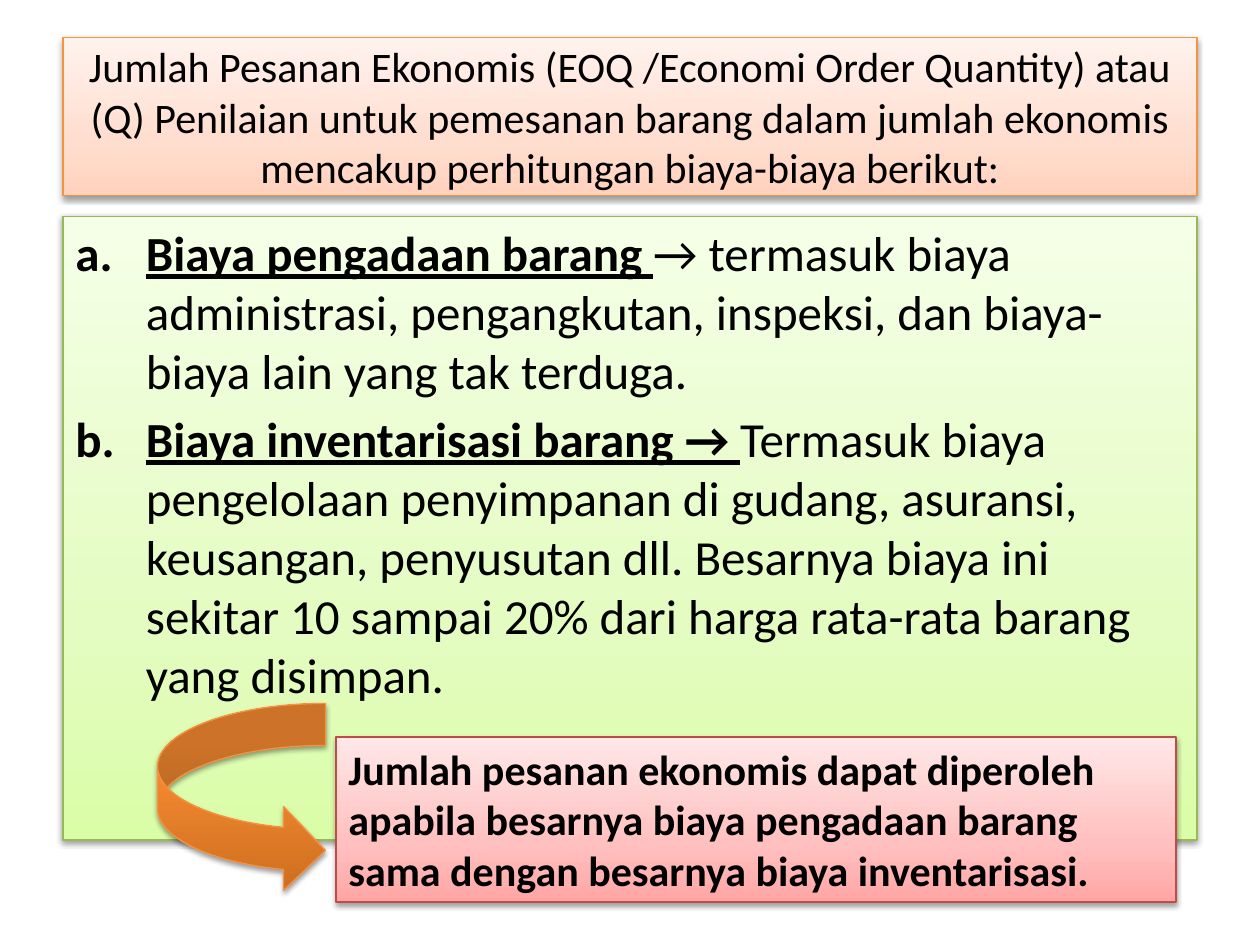
from lxml import etree
from pptx import Presentation
from pptx import util as u
from pptx.dml.color import RGBColor
from pptx.enum import shapes, text
from pptx.oxml.ns import qn

BLACK = RGBColor(0x00, 0x00, 0x00)
ORANGE = RGBColor(0xF6, 0x92, 0x40)
GREEN = RGBColor(0x98, 0xB9, 0x55)
RED = RGBColor(0xBF, 0x4C, 0x48)


def rgb(value):
    return RGBColor.from_string(value)


PEACH_FILL = [(0, rgb("FFD2BD")), (35, rgb("FFDED0")), (100, rgb("FFF2ED"))]
LIME_FILL = [(0, rgb("DAFDA7")), (35, rgb("E4FCC2")), (100, rgb("F5FFE7"))]
PINK_FILL = [(0, rgb("FFA6A5")), (35, rgb("FFC0BF")), (100, rgb("FFE7E7"))]
ARROW_FILL = [(0, rgb("CC6E20")), (80, rgb("FF9034")), (100, rgb("FF9136"))]

prs = Presentation()
prs.slide_width, prs.slide_height = u.Inches(10), u.Inches(7.5)
COL = prs.slide_width / 120
ROW = prs.slide_height / 90
slide = prs.slides.add_slide(prs.slide_layouts[6])


def add_panel(kind, col, row, cols, rows, stops, line, paragraphs=(), size=24,
              align=text.PP_ALIGN.LEFT, anchor=text.MSO_ANCHOR.TOP, numbered=False):
    """Add a shaded shape; each paragraph is a list of (text, emphasised) runs."""
    sp = slide.shapes.add_shape(kind, round(col * COL), round(row * ROW),
                                round(cols * COL), round(rows * ROW))
    sp.fill.gradient()
    sp.fill.gradient_angle = 90
    stop_list = sp._element.spPr.find(".//" + qn("a:gsLst"))
    for old in list(stop_list):
        stop_list.remove(old)
    for position, color in stops:
        stop = etree.SubElement(stop_list, qn("a:gs"), pos=str(position * 1000))
        etree.SubElement(stop, qn("a:srgbClr"), val=str(color))
    sp.line.color.rgb = line
    sp.line.width = u.Pt(0.75)

    sp.shadow.inherit = False
    effects = sp._element.spPr.find(qn("a:effectLst"))
    shadow = etree.SubElement(effects, qn("a:outerShdw"), blurRad=str(u.Pt(3.1)),
                              dist=str(u.Pt(1.6)), dir="5400000", rotWithShape="0")
    shade = etree.SubElement(shadow, qn("a:srgbClr"), val=str(BLACK))
    etree.SubElement(shade, qn("a:alpha"), val="38000")

    tf = sp.text_frame
    tf.word_wrap = True
    tf.vertical_anchor = anchor
    for i, runs in enumerate(paragraphs):
        p = tf.paragraphs[0] if i == 0 else tf.add_paragraph()
        p.alignment = align
        if i:
            p.space_before = u.Pt(0.2 * size)
        if numbered:
            pPr = p._p.get_or_add_pPr()
            pPr.set("marL", str(u.Inches(0.56)))
            pPr.set("indent", str(-u.Inches(0.56)))
            etree.SubElement(pPr, qn("a:buFont"), typeface="Calibri")
            etree.SubElement(pPr, qn("a:buAutoNum"), type="alphaLcPeriod")
        for words, emphasised in runs:
            r = p.add_run()
            r.text = words
            r.font.name = "Calibri"
            r.font.size = u.Pt(size)
            r.font.color.rgb = BLACK
            r.font.bold = emphasised
            r.font.underline = emphasised and numbered


RECT = shapes.MSO_SHAPE.RECTANGLE

add_panel(RECT, 6, 3.6, 108, 15, PEACH_FILL, ORANGE, [
    [("Jumlah Pesanan Ekonomis (EOQ /Economi Order Quantity) atau (Q) Penilaian untuk "
      "pemesanan barang dalam jumlah ekonomis mencakup perhitungan biaya-biaya berikut:",
      False)],
], align=text.PP_ALIGN.CENTER, anchor=text.MSO_ANCHOR.MIDDLE)

add_panel(RECT, 6, 20.6, 108, 59.4, LIME_FILL, GREEN, [
    [("Biaya pengadaan barang ", True),
     ("→ termasuk biaya administrasi, pengangkutan, inspeksi, dan biaya-biaya lain "
      "yang tak terduga.", False)],
    [("Biaya inventarisasi barang → ", True),
     ("Termasuk biaya pengelolaan penyimpanan di gudang, asuransi, keusangan, "
      "penyusutan dll. Besarnya biaya ini sekitar 10 sampai 20% dari harga rata-rata "
      "barang yang disimpan.", False)],
], size=28, numbered=True)

add_panel(RECT, 32, 70.2, 80, 15.7, PINK_FILL, RED, [
    [("Jumlah pesanan ekonomis dapat diperoleh apabila besarnya biaya pengadaan barang "
      "sama dengan besarnya biaya inventarisasi.", True)],
])

add_panel(shapes.MSO_SHAPE.CURVED_RIGHT_ARROW, 15, 67, 16, 18, ARROW_FILL, ORANGE)

prs.save("out.pptx")
